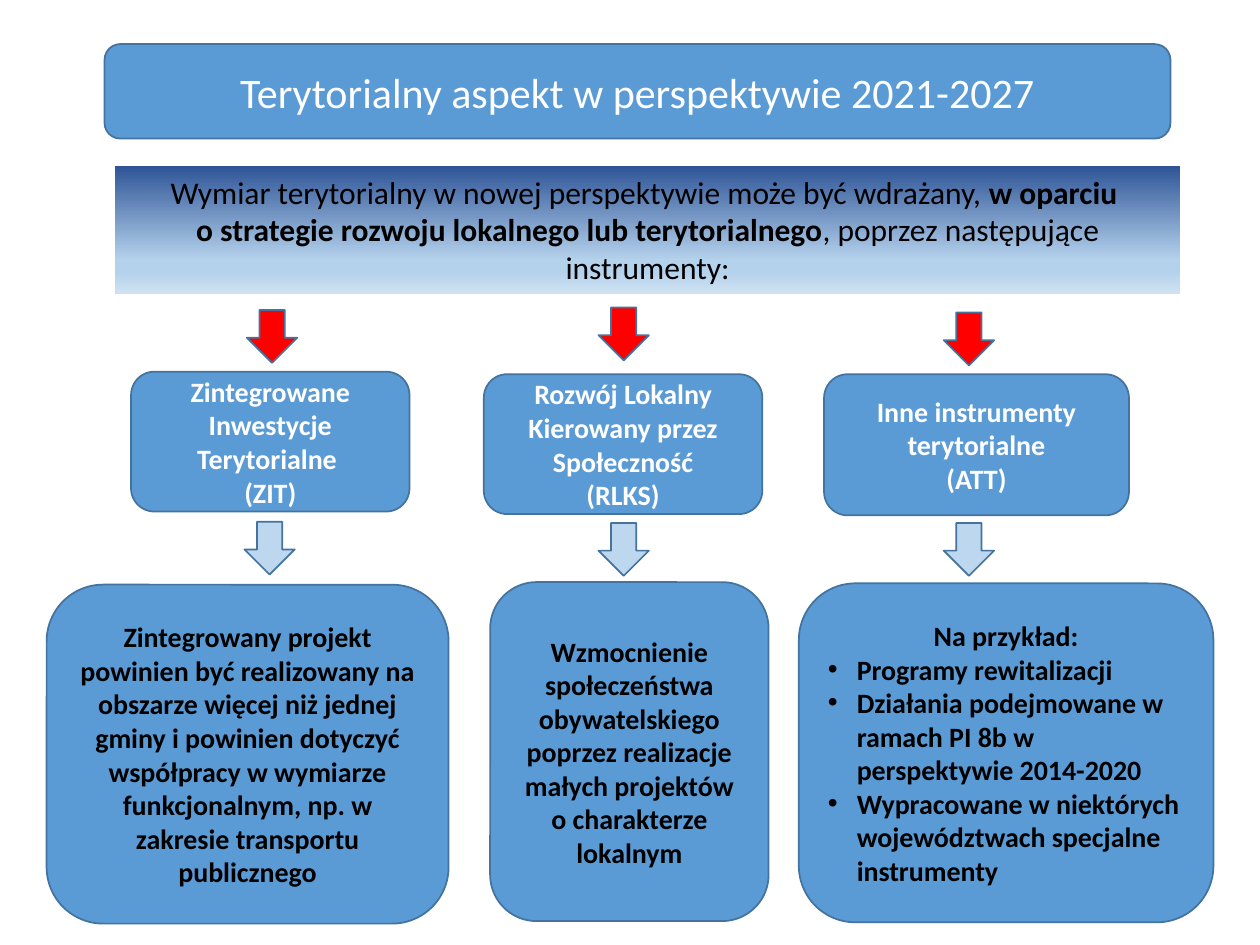
from typing import NamedTuple

from lxml import etree
from pptx import Presentation
from pptx.dml.color import RGBColor
from pptx.enum.shapes import MSO_SHAPE
from pptx.enum.text import MSO_ANCHOR, PP_ALIGN
from pptx.oxml.ns import qn
from pptx.util import Inches, Pt

ROUNDED, ARROW, RECTANGLE = (
    MSO_SHAPE.ROUNDED_RECTANGLE, MSO_SHAPE.DOWN_ARROW, MSO_SHAPE.RECTANGLE)
CENTER, LEFT = PP_ALIGN.CENTER, PP_ALIGN.LEFT
TOP, MIDDLE = MSO_ANCHOR.TOP, MSO_ANCHOR.MIDDLE

BLUE = RGBColor(0x5B, 0x9B, 0xD5)
OUTLINE = RGBColor(0x43, 0x73, 0x9E)
RED = RGBColor(0xFF, 0x00, 0x00)
PALE_BLUE = RGBColor(0xBD, 0xD7, 0xEE)
WHITE = RGBColor(0xFF, 0xFF, 0xFF)
BLACK = RGBColor(0x00, 0x00, 0x00)
BANNER_STOPS = [
    (0, RGBColor(0x2F, 0x55, 0x97)),
    (74, RGBColor(0xB5, 0xD2, 0xEC)),
    (83, RGBColor(0xB5, 0xD2, 0xEC)),
    (100, RGBColor(0xCE, 0xE1, 0xF2)),
]

FONT = "Calibri"
GRID = 0.1  # inches per column and per row: 100 columns by 75 rows
ARROW_WIDTH, ARROW_HEIGHT = 4, 4.2
INDENT = Inches(0.23)


class Area(NamedTuple):
    """Place on the grid, in columns and rows."""
    left: float
    top: float
    width: float
    height: float


class Line(NamedTuple):
    text: str
    bullet: bool = False


class Instrument(NamedTuple):
    """One column of the diagram, from top to bottom."""
    red_arrow: tuple[float, float]
    name_area: Area
    name: list[Line]
    pale_arrow: tuple[float, float]
    detail_area: Area
    detail: list[Line]


INSTRUMENTS = [
    Instrument(
        (19.6, 24.6), Area(10.4, 29.5, 22.1, 11.1),
        [Line("Zintegrowane Inwestycje Terytorialne "), Line("(ZIT)")],
        (19.4, 41.4), Area(3.7, 46.4, 31.9, 26.9),
        [Line("Zintegrowany projekt powinien być realizowany na obszarze "
              "więcej niż jednej gminy i powinien dotyczyć współpracy w "
              "wymiarze funkcjonalnym, np. w zakresie transportu publicznego")]),
    Instrument(
        (47.5, 24.4), Area(38.4, 29.7, 22.1, 11.1),
        [Line("Rozwój Lokalny Kierowany przez Społeczność"), Line("(RLKS)")],
        (47.5, 41.5), Area(38.9, 46.2, 22.1, 26.9),
        [Line("Wzmocnienie społeczeństwa obywatelskiego poprzez realizacje "
              "małych projektów o charakterze lokalnym")]),
    Instrument(
        (74.9, 24.8), Area(65.4, 29.7, 24.2, 11.2),
        [Line("Inne instrumenty terytorialne"), Line("(ATT)")],
        (74.9, 41.5), Area(63.4, 46.3, 32.9, 26.9),
        [Line("Na przykład:"),
         Line("Programy rewitalizacji", True),
         Line("Działania podejmowane w ramach PI 8b w perspektywie 2014-2020",
              True),
         Line("Wypracowane w niektórych województwach specjalne instrumenty",
              True)]),
]


def add_block(page, kind, area: Area, color: RGBColor = BLUE):
    shape = page.shapes.add_shape(kind, *(Inches(n * GRID) for n in area))
    shape.shadow.inherit = False
    shape.fill.solid()
    shape.fill.fore_color.rgb = color
    shape.line.color.rgb = OUTLINE
    shape.line.width = Pt(1)
    return shape


def style_font(font, size: float, color: RGBColor, bold: bool | None) -> None:
    font.name, font.size, font.bold = FONT, Pt(size), bold
    font.color.rgb = color


def add_bullet(para) -> None:
    properties = para._p.get_or_add_pPr()
    properties.set("marL", str(INDENT))
    properties.set("indent", str(-INDENT))
    etree.SubElement(properties, qn("a:buFont"), typeface="Arial")
    etree.SubElement(properties, qn("a:buChar"), char="•")


def add_text_box(page, area: Area, lines: list[Line], size: float,
                 color: RGBColor, bold: bool) -> None:
    frame = add_block(page, ROUNDED, area).text_frame
    frame.word_wrap = True
    frame.vertical_anchor = MIDDLE
    for index, line in enumerate(lines):
        para = frame.add_paragraph() if index else frame.paragraphs[0]
        para.text = line.text
        para.alignment = LEFT if line.bullet else CENTER
        if line.bullet:
            add_bullet(para)
        style_font(para.font, size, color, bold)


def add_arrow(page, corner: tuple[float, float], color: RGBColor) -> None:
    add_block(page, ARROW, Area(*corner, ARROW_WIDTH, ARROW_HEIGHT), color)


def add_banner(page) -> None:
    banner = add_block(page, RECTANGLE, Area(9.1, 13.2, 84.6, 10.1))
    banner.line.fill.background()

    # Gradient running from top to bottom
    banner.fill.gradient()
    banner.fill.gradient_angle = 270
    stops = banner._element.spPr.find(".//" + qn("a:gsLst"))
    for stop in list(stops):
        stops.remove(stop)
    for percent, color in BANNER_STOPS:
        stop = etree.SubElement(stops, qn("a:gs"), pos=str(percent * 1000))
        etree.SubElement(stop, qn("a:srgbClr"), val=str(color))

    # One sentence with a bold middle part
    frame = banner.text_frame
    frame.word_wrap = True
    frame.vertical_anchor = TOP
    para = frame.paragraphs[0]
    para.alignment = CENTER
    style_font(para.font, 18, BLACK, None)

    def add_span(text: str, bold: bool) -> None:
        span = para.add_run()
        span.text = text
        style_font(span.font, 18, BLACK, bold)

    add_span("Wymiar terytorialny w nowej perspektywie może być wdrażany, ",
             False)
    add_span("w oparciu ", True)
    para.add_line_break()
    add_span("o strategie rozwoju lokalnego lub terytorialnego", True)
    add_span(", poprzez następujące instrumenty:", False)


def main() -> None:
    deck = Presentation()
    deck.slide_width, deck.slide_height = Inches(10), Inches(7.5)
    page = deck.slides.add_slide(deck.slide_layouts[6])

    # Title and introduction
    add_text_box(page, Area(8.3, 3.5, 84.6, 7.5),
                 [Line("Terytorialny aspekt w perspektywie 2021-2027")],
                 24, WHITE, False)
    add_banner(page)

    # Three instruments, each with its description below
    for item in INSTRUMENTS:
        add_arrow(page, item.red_arrow, RED)
        add_text_box(page, item.name_area, item.name, 16, WHITE, True)
        add_arrow(page, item.pale_arrow, PALE_BLUE)
        add_text_box(page, item.detail_area, item.detail, 16, BLACK, True)

    deck.save("out.pptx")


if __name__ == "__main__":
    main()
